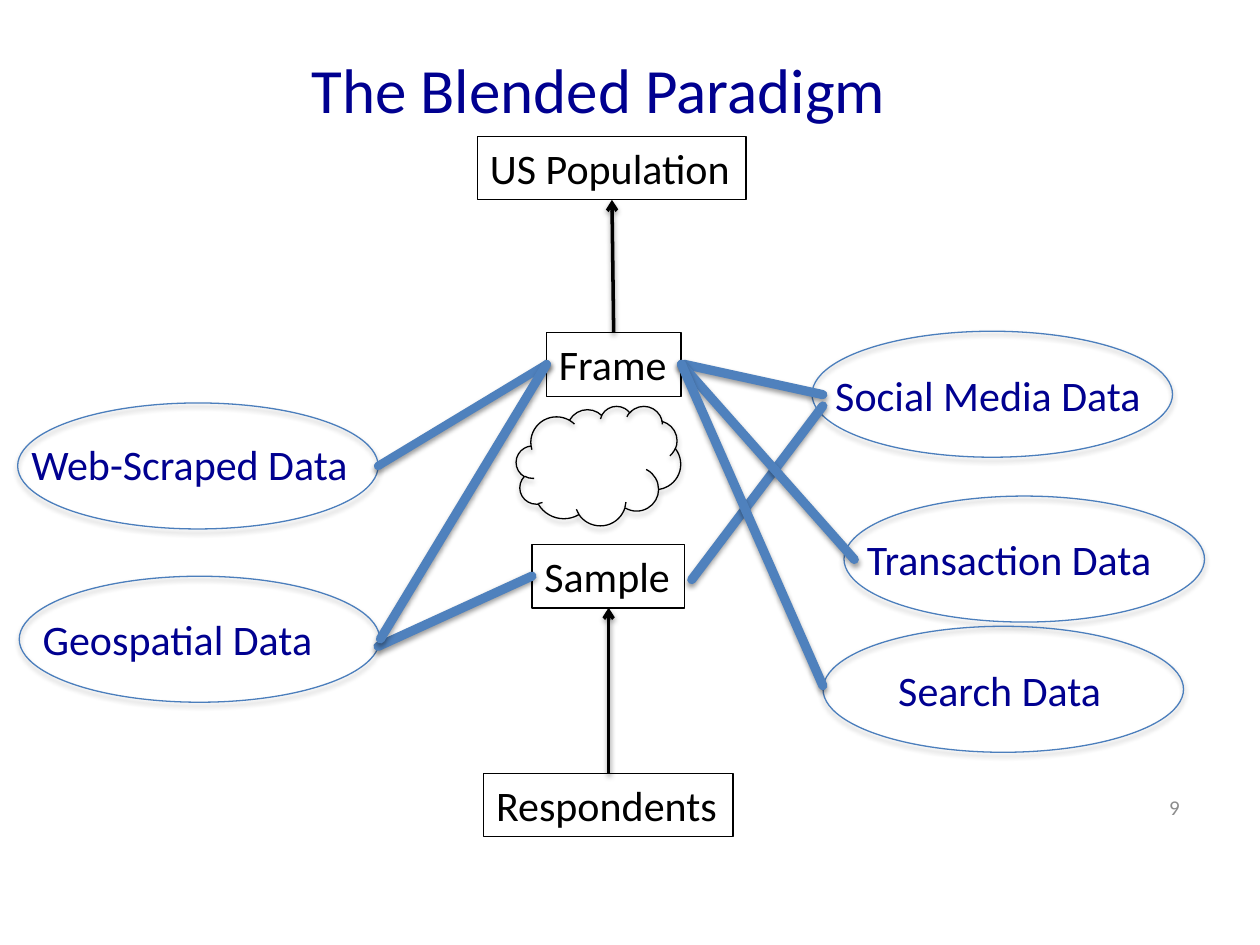
from dataclasses import dataclass

from lxml import etree
from pptx import Presentation
from pptx.dml.color import RGBColor
from pptx.enum.shapes import MSO_CONNECTOR, MSO_SHAPE
from pptx.enum.text import MSO_ANCHOR, MSO_AUTO_SIZE, PP_ALIGN
from pptx.oxml.ns import qn
from pptx.util import Pt

STRAIGHT = MSO_CONNECTOR.STRAIGHT
CLOUD, OVAL = MSO_SHAPE.CLOUD, MSO_SHAPE.OVAL
LEFT, CENTER, RIGHT = PP_ALIGN.LEFT, PP_ALIGN.CENTER, PP_ALIGN.RIGHT
TOP, MIDDLE = MSO_ANCHOR.TOP, MSO_ANCHOR.MIDDLE
GROW, FIXED = MSO_AUTO_SIZE.SHAPE_TO_FIT_TEXT, MSO_AUTO_SIZE.NONE


@dataclass(frozen=True)
class Theme:
    font: str = "Calibri"
    black: RGBColor = RGBColor(0, 0, 0)
    navy: RGBColor = RGBColor(0x00, 0x00, 0x90)
    outline: RGBColor = RGBColor(0x4B, 0x7E, 0xBC)
    link: RGBColor = RGBColor(0x4F, 0x81, 0xBD)
    gray: RGBColor = RGBColor(0x8C, 0x8C, 0x8C)
    title_size: int = 36
    label_size: int = 24
    number_size: int = 12


theme = Theme()


def write(holder, text, size, color, align=LEFT, anchor=TOP, wrap=False):
    frame = holder.text_frame
    frame.text = text
    frame.word_wrap = wrap
    frame.auto_size = FIXED if wrap else GROW
    frame.vertical_anchor = anchor
    paragraph = frame.paragraphs[0]
    paragraph.alignment = align
    paragraph.font.name = theme.font
    paragraph.font.size = Pt(size)
    paragraph.font.color.rgb = color


def drop_shadow(item, opacity, distance):
    properties = item._element.spPr
    effects = etree.SubElement(properties, qn("a:effectLst"))
    shadow = etree.SubElement(
        effects, qn("a:outerShdw"), blurRad=str(Pt(3.1)), dist=str(Pt(distance)),
        dir="5400000", rotWithShape="0")
    tint = etree.SubElement(shadow, qn("a:srgbClr"), val=str(theme.black))
    etree.SubElement(tint, qn("a:alpha"), val=str(opacity * 1000))


deck = Presentation()
deck.slide_width, deck.slide_height = Pt(720), Pt(540)
slide = deck.slides.add_slide(deck.slide_layouts[5])
shapes = slide.shapes

title = shapes.title
title.left, title.top, title.width, title.height = Pt(168.5), Pt(25.2), Pt(347), Pt(51)
write(title, "The Blended Paradigm", theme.title_size, theme.navy, CENTER)

stages = [
    ("US Population", 272.9, 77.9, 153.4),
    ("Frame", 312.3, 190.1, 77),
    ("Sample", 304, 311.2, 87),
    ("Respondents", 276.4, 441.9, 142.5),
]
for text, left, top, width in stages:
    stage = shapes.add_textbox(Pt(left), Pt(top), Pt(width), Pt(36.3))
    stage.line.color.rgb = theme.black
    stage.line.width = Pt(0.75)
    write(stage, text, theme.label_size, theme.black)

sources = [
    ("Web-Scraped Data", 10.1, 230.3, 10.8, 247, 198.7),
    ("Geospatial Data", 11, 329.3, 17.3, 347.2, 170.6),
    ("Social Media Data", 464, 189.3, 470.2, 207.4, 191.5),
    ("Transaction Data", 482.3, 283.5, 488.2, 301.5, 181.4),
    ("Search Data", 470.3, 357.9, 506.2, 376.1, 132.5),
]
outlines = [(OVAL, left, top, 206, 72, theme.outline)
            for _, left, top, *_ in sources]
outlines.append((CLOUD, 295, 232, 94, 68.3, theme.black))
for kind, left, top, width, height, color in outlines:
    outline = shapes.add_shape(kind, Pt(left), Pt(top), Pt(width), Pt(height))
    outline.fill.background()
    outline.line.color.rgb = color
    outline.line.width = Pt(0.75)
    drop_shadow(outline, 35, 1.8)

for text, _, _, left, top, width in sources:
    label = shapes.add_textbox(Pt(left), Pt(top), Pt(width), Pt(36.3))
    write(label, text, theme.label_size, theme.navy)

flows = [
    (347.8, 441.9, 347.8, 347.3),
    (350.7, 190.1, 349.7, 114.2),
]
links = [
    (216, 266.3, 312.3, 208.2, 4.75),
    (216, 369.4, 304, 329.2, 5.25),
    (391, 208.2, 470.2, 225.5, 5.25),
    (395.3, 331.2, 470.2, 232, 5.25),
    (389.4, 208.2, 488.2, 319.7, 5.25),
    (389.4, 208.2, 470.2, 391.8, 5.25),
    (217.4, 365.1, 312.3, 208.2, 5.25),
]
lines = [(*flow, 2, theme.black) for flow in flows]
lines += [(*link, theme.link) for link in links]
for x1, y1, x2, y2, weight, color in lines:
    line = shapes.add_connector(STRAIGHT, Pt(x1), Pt(y1), Pt(x2), Pt(y2))
    line.line.color.rgb = color
    line.line.width = Pt(weight)
    stroke = line._element.spPr.find(qn("a:ln"))
    if color == theme.black:
        etree.SubElement(stroke, qn("a:tailEnd"), type="arrow")
    else:
        stroke.set("cap", "rnd")
    drop_shadow(line, 38, 1.6)

number = shapes.add_textbox(Pt(513.4), Pt(447.1), Pt(167.8), Pt(28.8))
write(number, "9", theme.number_size, theme.gray, RIGHT, MIDDLE, wrap=True)

deck.save("out.pptx")
